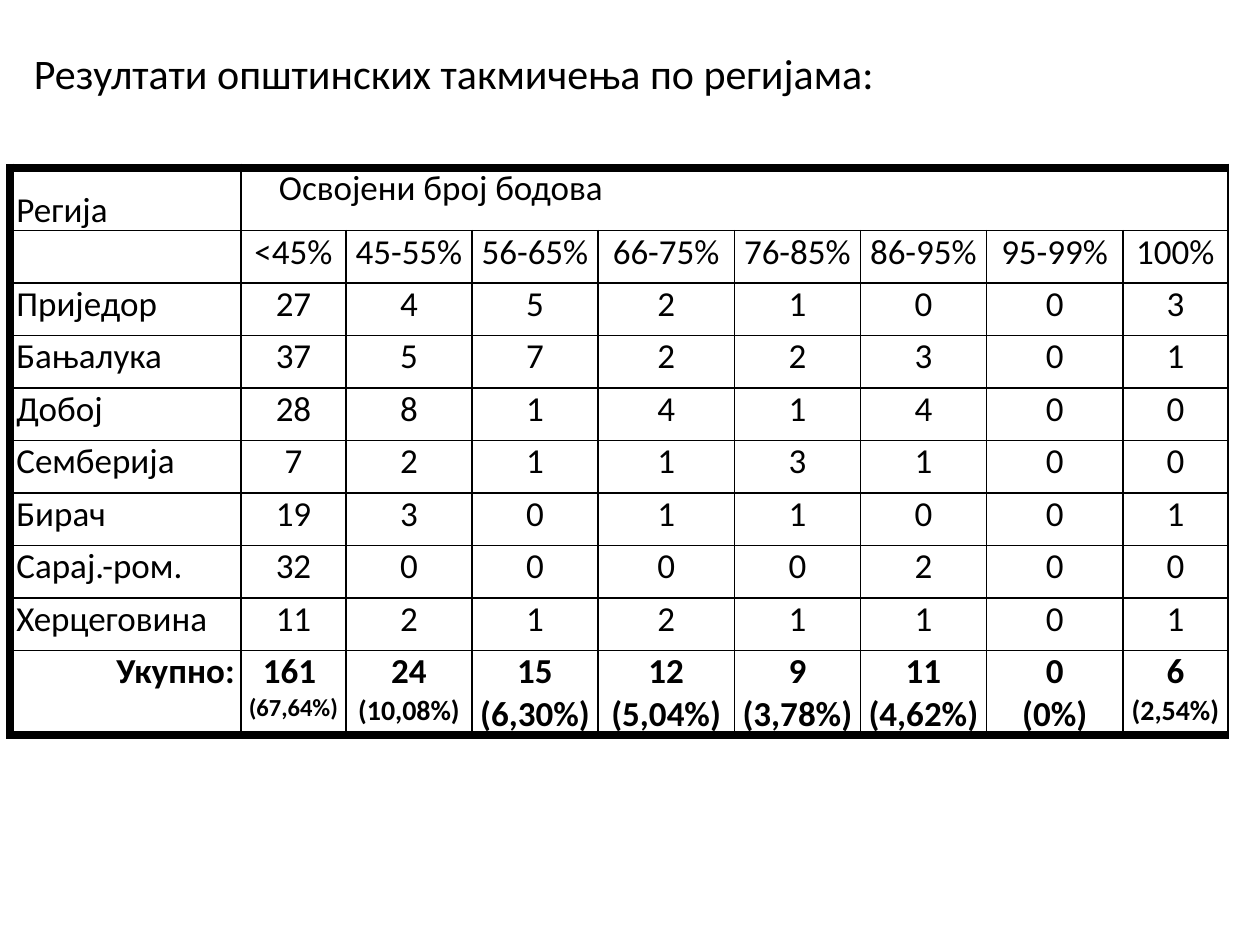
from dataclasses import dataclass

from lxml.etree import SubElement
from pptx import Presentation
from pptx.dml.color import RGBColor
from pptx.enum.text import MSO_ANCHOR as Anchor, MSO_AUTO_SIZE as AutoSize, PP_ALIGN as Align
from pptx.oxml.ns import qn
from pptx.util import Inches, Pt

BLACK = RGBColor(0x00, 0x00, 0x00)
FONT = "Calibri"
THIN, THICK = Pt(1), Pt(5.25)
UNIT = Inches(1) / 12
COLUMN_UNITS = (22, 10, 12, 12, 13, 12, 12, 13, 10)
ROW_UNITS = 5


@dataclass
class Line:
    text: str
    size: int = 20
    bold: bool = False
    align: Align = Align.CENTER
    margin: float = 0.49
    indent: float = -0.49
    spacing: float | None = None


@dataclass
class Total:
    count: str
    share: str
    share_size: int = 20


BANDS = ("<45%", "45-55%", "56-65%", "66-75%", "76-85%", "86-95%", "95-99%", "100%")
REGIONS = {
    "Приједор": (27, 4, 5, 2, 1, 0, 0, 3),
    "Бањалука": (37, 5, 7, 2, 2, 3, 0, 1),
    "Добој": (28, 8, 1, 4, 1, 4, 0, 0),
    "Семберија": (7, 2, 1, 1, 3, 1, 0, 0),
    "Бирач": (19, 3, 0, 1, 1, 0, 0, 1),
    "Сарај.-ром.": (32, 0, 0, 0, 0, 2, 0, 0),
    "Херцеговина": (11, 2, 1, 2, 1, 1, 0, 1),
}
TOTALS = (
    Total("161 ", "(67,64%)", 14),
    Total("24", "(10,08%)", 16),
    Total("15", "(6,30%)"),
    Total("12", "(5,04%)"),
    Total("9", "(3,78%)"),
    Total("11", "(4,62%)"),
    Total("0", "(0%)"),
    Total("6", "(2,54%)", 16),
)


def add_span(para, text: str, size: int, bold: bool = False) -> None:
    span = para.add_run()
    span.text = text
    span.font.name = FONT
    span.font.size = Pt(size)
    span.font.bold = bold
    span.font.color.rgb = BLACK


def write_lines(cell, lines: list[Line]) -> None:
    frame = cell.text_frame
    for number, line in enumerate(lines):
        para = frame.add_paragraph() if number else frame.paragraphs[0]
        para.alignment = line.align
        if line.spacing:
            para.line_spacing = line.spacing
        properties = para._p.get_or_add_pPr()
        properties.set("marL", str(Inches(line.margin)))
        properties.set("indent", str(Inches(line.indent)))
        add_span(para, line.text, line.size, line.bold)


def set_borders(cell, left: int, right: int, top: int, bottom: int) -> None:
    properties = cell._tc.get_or_add_tcPr()
    sides = {"a:lnL": left, "a:lnR": right, "a:lnT": top, "a:lnB": bottom}
    for tag, width in sides.items():
        border = SubElement(properties, qn(tag), w=str(width))
        fill = SubElement(border, qn("a:solidFill"))
        SubElement(fill, qn("a:srgbClr"), val=str(BLACK))


def table_rows() -> list[list[list[Line]]]:
    """Return the lines of every cell, row by row."""
    header = [
        [Line("Регија", align=Align.LEFT, spacing=1.5)],
        [Line("Освојени број бодова", align=Align.LEFT, margin=0.5, indent=-0.25)],
    ]
    bands = [[]] + [[Line(band)] for band in BANDS]
    regions = [
        [[Line(name, align=Align.LEFT)]] + [[Line(str(count))] for count in counts]
        for name, counts in REGIONS.items()
    ]
    totals = [[Line("Укупно:", bold=True, align=Align.RIGHT)]] + [
        [Line(total.count, bold=True), Line(total.share, total.share_size, True)]
        for total in TOTALS
    ]
    return [header, bands, *regions, totals]


def add_title(page) -> None:
    box = page.shapes.add_textbox(Inches(0.17), Inches(0.33), Inches(7.58), Inches(0.5))
    frame = box.text_frame
    frame.word_wrap = True
    frame.auto_size = AutoSize.SHAPE_TO_FIT_TEXT
    add_span(frame.paragraphs[0], "Резултати општинских такмичења по регијама:", 24)


def add_results(page) -> None:
    rows = table_rows()
    last = len(rows) - 1
    holder = page.shapes.add_table(
        len(rows), len(COLUMN_UNITS), Inches(0.08), Inches(1.33),
        round(sum(COLUMN_UNITS) * UNIT), round(len(rows) * ROW_UNITS * UNIT),
    )
    table = holder.table
    table.first_row = table.horz_banding = False
    for column, units in zip(table.columns, COLUMN_UNITS):
        column.width = round(units * UNIT)
    holder.height = Inches(4.5)

    for r in range(len(rows)):
        for c in range(len(COLUMN_UNITS)):
            cell = table.cell(r, c)
            cell.margin_left = cell.margin_right = Inches(0.05)
            cell.margin_top = cell.margin_bottom = 0
            set_borders(
                cell,
                left=THIN if c else THICK,
                right=THIN,
                top=THIN if r else THICK,
                bottom=THICK if r == last else THIN,
            )
            cell.fill.background()
    table.cell(0, 1).merge(table.cell(0, len(COLUMN_UNITS) - 1))
    table.cell(0, 0).vertical_anchor = Anchor.MIDDLE
    for r, row in enumerate(rows):
        for c, lines in enumerate(row):
            write_lines(table.cell(r, c), lines)


def main() -> None:
    deck = Presentation()
    deck.slide_width, deck.slide_height = Inches(10), Inches(7.5)
    page = deck.slides.add_slide(deck.slide_layouts[6])
    add_title(page)
    add_results(page)
    deck.save("out.pptx")


if __name__ == "__main__":
    main()
